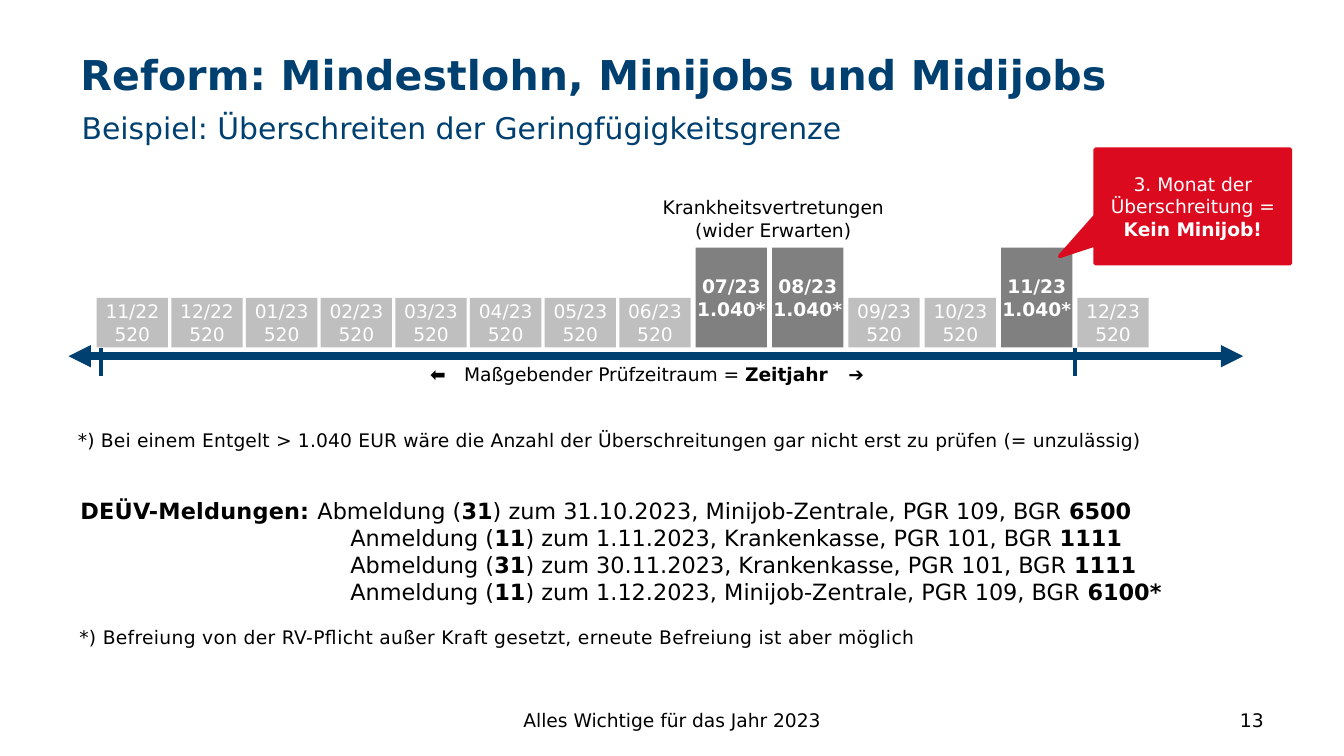
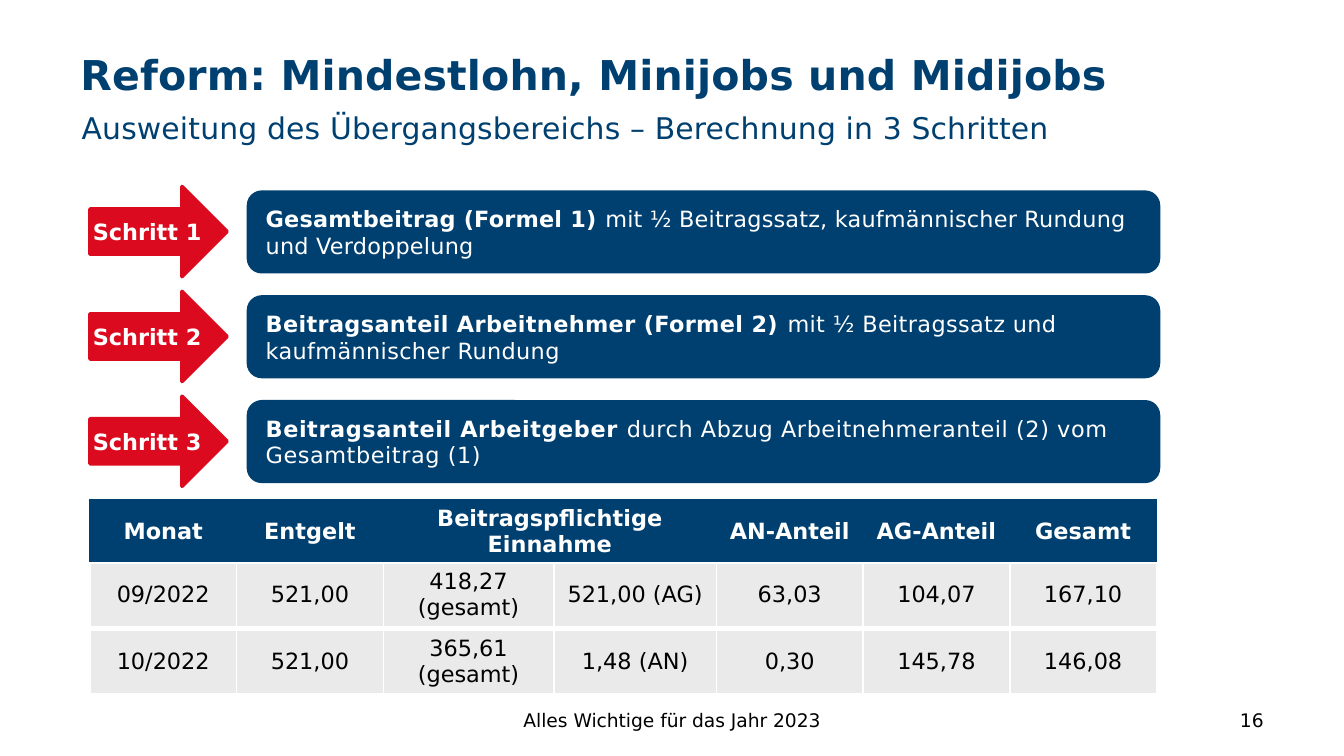
"""Build two slides on mini-job limits and the midi-job contribution steps."""
import pptx
import pptx.util
import pptx.dml.color
import pptx.enum.shapes
import pptx.enum.text
import pptx.oxml
import pptx.oxml.ns

Pt = pptx.util.Pt
RGB = pptx.dml.color.RGBColor
SHAPE = pptx.enum.shapes.MSO_SHAPE
ALIGN = pptx.enum.text.PP_ALIGN
ANCHOR = pptx.enum.text.MSO_ANCHOR
qn = pptx.oxml.ns.qn

NAVY = RGB(0x00, 0x40, 0x70)
RED = RGB(0xDC, 0x0A, 0x1E)
LIGHT = RGB(0xBF, 0xBF, 0xBF)
DARK = RGB(0x80, 0x80, 0x80)
PALE = RGB(0xEA, 0xEA, 0xEA)
WHITE = RGB(0xFF, 0xFF, 0xFF)
BLACK = RGB(0x00, 0x00, 0x00)
FONT = "DejaVu Sans"
TITLE = "Reform: Mindestlohn, Minijobs und Midijobs"
FOOTER = "Alles Wichtige für das Jahr 2023"

MONTHS = ["11/22", "12/22"] + [f"{n:02}/23" for n in range(1, 13)]
PEAKS = {"07/23", "08/23", "11/23"}
REPORTS = [
    "|DEÜV-Meldungen:|\tAbmeldung (|31|) zum 31.10.2023, Minijob-Zentrale, PGR 109, BGR |6500",
    "Anmeldung (|11|) zum 1.11.2023, Krankenkasse, PGR 101, BGR |1111",
    "Abmeldung (|31|) zum 30.11.2023, Krankenkasse, PGR 101, BGR |1111",
    "Anmeldung (|11|) zum 1.12.2023, Minijob-Zentrale, PGR 109, BGR |6100*",
]
STEPS = [
    ("|Gesamtbeitrag (Formel 1) |mit ½ Beitragssatz, kaufmännischer Rundung und Verdoppelung", 0.1),
    ("|Beitragsanteil Arbeitnehmer (Formel 2) |mit ½ Beitragssatz und kaufmännischer Rundung", 0.2),
    ("|Beitragsanteil Arbeitgeber |durch Abzug Arbeitnehmeranteil (2) vom Gesamtbeitrag (1)", 0.3),
]
HEAD = ["Monat", "Entgelt", "Beitragspflichtige Einnahme", "", "AN-Anteil", "AG-Anteil", "Gesamt"]
SEPT = ["09/2022", "521,00", "418,27 (gesamt)", "521,00 (AG)", "63,03", "104,07", "167,10"]
OCT = ["10/2022", "521,00", "365,61 (gesamt)", "1,48 (AN)", "0,30", "145,78", "146,08"]
COLS = [78.6, 78.6, 91.4, 87.1, 78.6, 78.6, 78.6]


def place(box):
    """Turn a box in points into lengths."""
    return [Pt(n) for n in box]


def set_tabs(para, stops):
    """Give a paragraph its left tab stops, in points."""
    tabs = pptx.oxml.parse_xml(f'<a:tabLst {pptx.oxml.ns.nsdecls("a")}/>')
    for stop in stops:
        tab = tabs.makeelement(qn("a:tab"), {"pos": str(int(Pt(stop))), "algn": "l"})
        tabs.append(tab)
    para._p.get_or_add_pPr().append(tabs)


def write(frame, lines, size=10, color=BLACK, bold=False, align=ALIGN.LEFT,
          space=0, tabs=()):
    """Fill a frame line by line; text between bars turns bold."""
    frame.word_wrap = True
    for i, line in enumerate(lines):
        para = frame.add_paragraph() if i else frame.paragraphs[0]
        para.alignment = align
        if tabs:
            set_tabs(para, tabs)
        font = para.font
        font.name, font.size, font.bold = FONT, Pt(size), bold
        font.color.rgb = color
        if space:
            font._rPr.set("spc", str(round(space * 100)))
        for j, part in enumerate(line.split("|")):
            if part:
                run = para.add_run()
                run.text = part
                if j % 2:
                    run.font.bold = True


def inset(frame, side, edge):
    """Set the side and edge margins of a frame."""
    frame.margin_left = frame.margin_right = Pt(side)
    frame.margin_top = frame.margin_bottom = Pt(edge)


def label(slide, box, lines, anchor=ANCHOR.TOP, side=7.2, **style):
    """Add a text box."""
    frame = slide.shapes.add_textbox(*place(box)).text_frame
    inset(frame, side, 3.6)
    frame.vertical_anchor = anchor
    write(frame, lines, **style)
    return frame


def block(slide, kind, box, fill, lines, line=True, side=7.2, edge=3.6, **style):
    """Add a filled shape with white text."""
    shape = slide.shapes.add_shape(kind, *place(box))
    shape.shadow.inherit = False
    shape.fill.solid()
    shape.fill.fore_color.rgb = fill
    if line:
        shape.line.color.rgb = fill
        shape.line.width = Pt(2)
    else:
        shape.line.fill.background()
    inset(shape.text_frame, side, edge)
    shape.text_frame.vertical_anchor = ANCHOR.MIDDLE
    write(shape.text_frame, lines, color=WHITE, **style)
    return shape


def rule(slide, start, end, width, heads=False):
    """Add a straight navy line, with arrowheads if asked."""
    line = slide.shapes.add_connector(
        pptx.enum.shapes.MSO_CONNECTOR.STRAIGHT, *place(start + end))
    line.line.color.rgb = NAVY
    line.line.width = Pt(width)
    props = line._element.spPr
    if heads:
        stroke = props.find(qn("a:ln"))
        for tag in ("a:headEnd", "a:tailEnd"):
            stroke.append(stroke.makeelement(qn(tag), {"type": "triangle"}))
    props.append(props.makeelement(qn("a:effectLst"), {}))


def frame_slide(deck, sub, page, space=0):
    """Add a slide with title, subtitle, footer and page number."""
    slide = deck.slides.add_slide(deck.slide_layouts[6])
    label(slide, (516, 375, 168, 22), [page], ANCHOR.MIDDLE, align=ALIGN.RIGHT)
    label(slide, (246, 375, 228, 22), [FOOTER], ANCHOR.MIDDLE, align=ALIGN.CENTER)
    label(slide, (36, 23, 584, 32), [TITLE], size=22, color=NAVY, bold=True, space=0.1)
    label(slide, (36.7, 55, 584, 20), [sub], size=16, color=NAVY, space=space)
    return slide


def draw_time(slide, box):
    """Draw the month bars over their time axis."""
    x, y, wide, high = box
    axis = y + high
    rule(slide, (x, axis), (x + wide, axis), 4, True)
    for tick in (54, 576):
        rule(slide, (tick, axis - 4.5), (tick, axis + 10.5), 2)
    label(slide, (x + 188, axis, 318, 15),
          ["|⬅|\tMaßgebender Prüfzeitraum = |Zeitjahr\t➔"], side=5.76, tabs=(18.2, 224))
    for i, month in enumerate(MONTHS):
        peak = month in PEAKS
        tall = 53.5 if peak else 26.6
        left = x + 15.1 + 40 * i + 0.9 * max(0, i - 7)
        block(slide, SHAPE.RECTANGLE, (left, axis - 4.6 - tall, 38.2, tall),
              DARK if peak else LIGHT, [month, "1.040*" if peak else "520"],
              line=False, side=0, edge=0, bold=peak, align=ALIGN.CENTER)
    label(slide, (x + 229, y, 297, 15), ["Krankheitsvertretungen", "(wider Erwarten)"],
          side=5.76, align=ALIGN.CENTER)


def draw_notes(slide, box):
    """Write the report lines with the note above and below."""
    x, y, wide, high = box
    label(slide, (x, y - 36.7, 680, 19),
          ["*) Bei einem Entgelt > 1.040 EUR wäre die Anzahl der Überschreitungen "
           "gar nicht erst zu prüfen (= unzulässig)"], side=5.76, space=0.1)
    frame = label(slide, box, REPORTS, size=12, tabs=(127,))
    for para in frame.paragraphs[1:]:
        para._p.get_or_add_pPr().set("marL", str(int(Pt(144.6))))
    frame.paragraphs[0].runs[0].font._rPr.set("spc", "10")
    label(slide, (x + 0.7, y + high + 3.6, 680, 19),
          ["*) Befreiung von der RV-Pflicht außer Kraft gesetzt, "
           "erneute Befreiung ist aber möglich"], side=5.76, space=0.2)


def draw_call(slide, box):
    """Draw the red callout."""
    call = block(slide, SHAPE.RECTANGULAR_CALLOUT, box, RED,
                 ["3. Monat der Überschreitung = |Kein Minijob!"], align=ALIGN.CENTER)
    call.adjustments[0], call.adjustments[1] = -0.683, 0.437


def draw_steps(slide, box):
    """Draw each step as an arrow with its text bar."""
    x, y, wide, high = box
    pitch = high / len(STEPS)
    for i, (text, space) in enumerate(STEPS):
        top = y + pitch * i
        block(slide, SHAPE.ROUNDED_RECTANGLE, (x + 85, top + 3, wide - 85, 42.5),
              NAVY, [text], size=12, space=space)
        block(slide, SHAPE.RIGHT_ARROW, (x, top, 73.4, 48.2), RED,
              [f"Schritt {i + 1}"], side=0, size=12, bold=True, align=ALIGN.CENTER)


def edge_cell(cell, color, sides):
    """Draw borders on the named sides of a cell."""
    props = cell._tc.get_or_add_tcPr()
    for side in sides:
        props.append(pptx.oxml.parse_xml(
            f'<a:ln{side} {pptx.oxml.ns.nsdecls("a")} w="12700"><a:solidFill>'
            f'<a:srgbClr val="{color}"/></a:solidFill></a:ln{side}>'))


def draw_grid(slide, box, rows):
    """Draw a table whose header row, if any, is navy."""
    grid = slide.shapes.add_table(len(rows), len(COLS), *place(box)).table
    grid.first_row = grid.horz_banding = False
    for col, wide in zip(grid.columns, COLS):
        col.width = Pt(wide)
    for i, row in enumerate(rows):
        grid.rows[i].height = Pt(box[3] / len(rows))
        head = row is HEAD
        for j, text in enumerate(row):
            cell = grid.cell(i, j)
            inset(cell, 5, 0)
            cell.vertical_anchor = ANCHOR.MIDDLE
            edge_cell(cell, NAVY if head else WHITE, "LRTB" if head or i == 0 else "LRB")
            cell.fill.solid()
            cell.fill.fore_color.rgb = NAVY if head else PALE
            write(cell.text_frame, [text], size=12, color=WHITE if head else BLACK,
                  bold=head, align=ALIGN.CENTER)
        if head:
            grid.cell(i, 2).merge(grid.cell(i, 3))


def main():
    """Build and save the deck."""
    deck = pptx.Presentation()
    deck.slide_width, deck.slide_height = Pt(720), Pt(405)
    slide = frame_slide(deck, "Beispiel: Überschreiten der Geringfügigkeitsgrenze", "13")
    draw_time(slide, (36.7, 101.5, 629.3, 89.3))
    draw_call(slide, (586.8, 80, 104.4, 61.2))
    draw_notes(slide, (36, 262.8, 655, 65.5))
    slide = frame_slide(
        deck, "Ausweitung des Übergangsbereichs – Berechnung in 3 Schritten", "16", 0.1)
    draw_steps(slide, (48.2, 100, 572.4, 168.5))
    draw_grid(slide, (48.2, 267.9, 571.5, 67.7), [HEAD, SEPT])
    draw_grid(slide, (48.2, 337.7, 571.5, 33.8), [OCT])
    deck.save("out.pptx")


if __name__ == "__main__":
    main()
